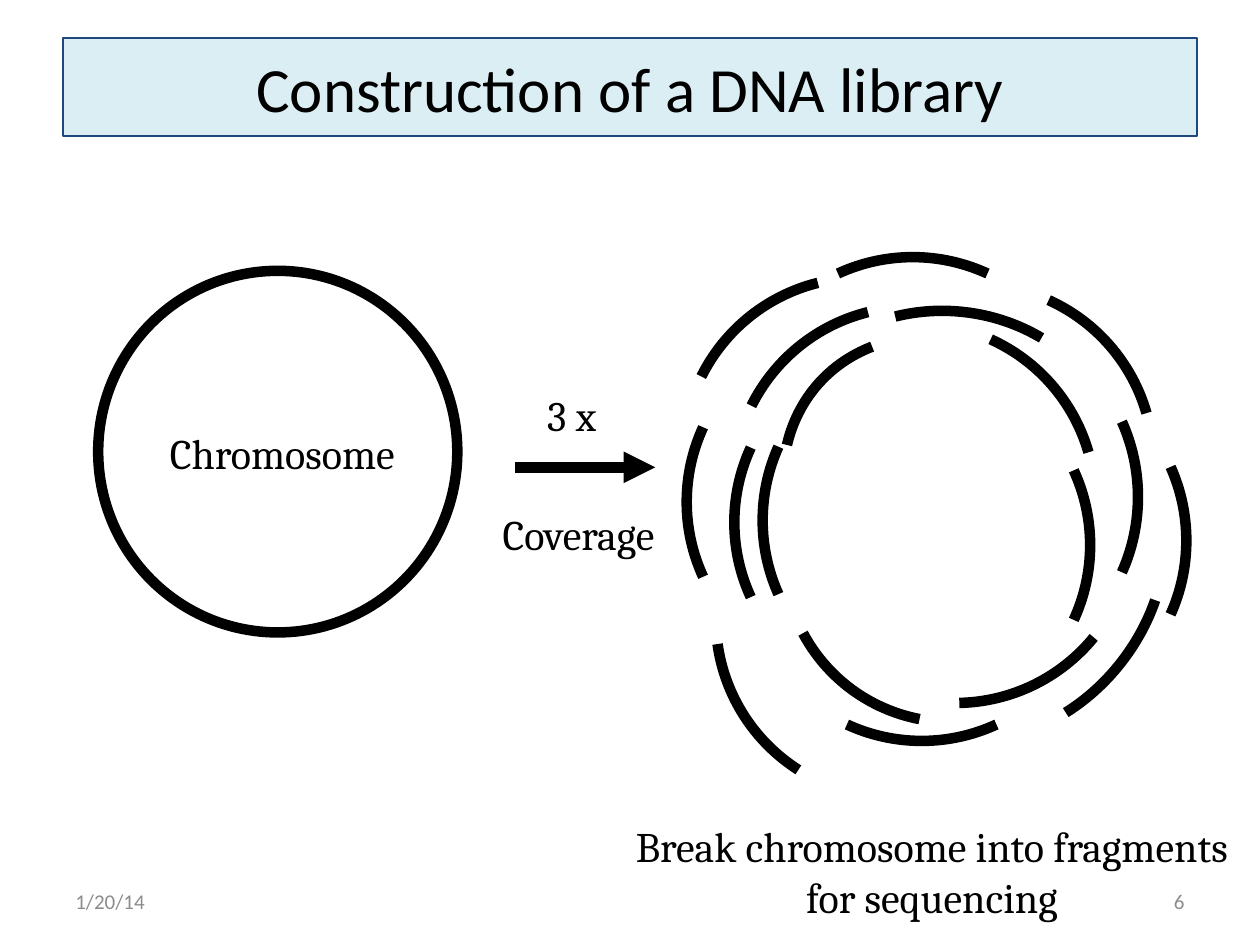
from math import atan, degrees, radians, tan

from lxml import etree
from pptx import Presentation
from pptx.dml.color import RGBColor
from pptx.enum.shapes import MSO_CONNECTOR, MSO_SHAPE
from pptx.enum.text import MSO_ANCHOR, PP_ALIGN
from pptx.oxml.ns import qn
from pptx.util import Cm, Pt

LEFT, MID, RIGHT = PP_ALIGN.LEFT, PP_ALIGN.CENTER, PP_ALIGN.RIGHT
MIDDLE = MSO_ANCHOR.MIDDLE
OVAL, ARC = MSO_SHAPE.OVAL, MSO_SHAPE.ARC
STRAIGHT = MSO_CONNECTOR.STRAIGHT

BLACK = RGBColor(0x00, 0x00, 0x00)
GREY = RGBColor(0x8C, 0x8C, 0x8C)
PALE = RGBColor(0xDB, 0xEE, 0xF4)
NAVY = RGBColor(0x1F, 0x49, 0x7D)

THICK = Pt(6)
HALF = 24.6
SIZE = (7.24, 7.29)

PIECES = [
    (3.89, 4.23, 321.2, SIZE),
    (4.90, 3.83, 0, SIZE),
    (6.12, 4.36, 49.1, SIZE),
    (5.74, 5.53, 154, SIZE),
    (4.83, 5.99, 90, SIZE),
    (3.99, 5.12, 270, SIZE),
    (5.08, 6.29, 180, SIZE),
    (5.38, 5.49, 270, (7.14, 7.01)),
    (4.90, 4.82, 321.2, SIZE),
    (4.95, 5.15, 49.1, SIZE),
    (5.73, 5.15, 310.9, (6.3, 7.29)),
    (5.83, 5.96, 216.4, (7.01, 7.29)),
    (4.95, 5.53, 270, SIZE),
    (4.57, 7.46, 237.3, SIZE),
    (6.91, 5.90, 90, (7.14, 7.01)),
    (6.97, 6.71, 128.5, (6.96, 5.38)),
    (5.60, 4.50, 8.3, (7.16, 6.45)),
    (5.87, 5.02, 90, (7.29, 7.14)),
]


def write(frame, text, size=24, font="Cambria", color=BLACK, align=MID, wrap=True):
    """Fill a text frame with one formatted paragraph."""
    frame.word_wrap = wrap
    frame.vertical_anchor = MIDDLE
    para = frame.paragraphs[0]
    para.alignment = align
    run = para.add_run()
    run.text = text
    run.font.size = Pt(size)
    run.font.name = font
    run.font.color.rgb = color


def label(slide, box, text, **style):
    """Add a text box holding one paragraph."""
    area = slide.shapes.add_textbox(*map(Cm, box))
    write(area.text_frame, text, **style)


def stroke(slide, kind, box):
    """Add an unfilled shape with a thick black line."""
    shape = slide.shapes.add_shape(kind, *map(Cm, box))
    shape.shadow.inherit = False
    shape.fill.background()
    shape.line.color.rgb = BLACK
    shape.line.width = THICK
    return shape


def header(slide, box):
    """Place and format the title."""
    title = slide.shapes.title
    title.left, title.top, title.width, title.height = map(Cm, box)
    title.fill.solid()
    title.fill.fore_color.rgb = PALE
    title.line.color.rgb = NAVY
    title.line.width = Pt(1)
    write(title.text_frame, "Construction of a DNA library", size=36, font="Calibri")


def genome(slide, box):
    """Draw the whole chromosome as a labelled ring."""
    x, y, wide, high = box
    stroke(slide, OVAL, box)
    label(slide, (x + 1.17, y + 3.04, wide - 2.16, 1.27), "Chromosome", wrap=False)


def step(slide, box):
    """Draw the coverage arrow between its two labels."""
    x, y, wide, high = box
    level = y + 1.7
    arrow = slide.shapes.add_connector(
        STRAIGHT, Cm(x + 0.61), Cm(level), Cm(x + 3.43), Cm(level))
    arrow.line.color.rgb = BLACK
    arrow.line.width = THICK
    etree.SubElement(arrow.line._get_or_add_ln(), qn("a:tailEnd"), type="triangle")
    etree.SubElement(arrow._element.spPr, qn("a:effectLst"))
    label(slide, (x + 0.96, y, 1.57, 1.27), "3 x", wrap=False)
    label(slide, (x, y + high - 1.27, wide, 1.27), "Coverage", wrap=False)


def library(slide, box):
    """Scatter the fragments and caption them."""
    x, y, wide, high = box
    for across, down, turn, (w, h) in PIECES:
        arc = stroke(slide, ARC, (x + across - w / 2, y + down - h / 2, w, h))
        lean = degrees(atan(w / h * tan(radians(HALF))))
        arc.adjustments[0] = (270 - lean) * 0.6
        arc.adjustments[1] = (270 + lean) * 0.6
        arc.rotation = turn
    label(slide, (x - 1.23, y + high - 2.31, wide + 1.23, 2.31),
          "Break chromosome into fragments for sequencing")


def footer(slide, box):
    """Write the date and the slide number."""
    x, y, wide, high = box
    span = 5.92
    style = dict(size=12, font="Calibri", color=GREY)
    label(slide, (x, y, span, high), "1/20/14", align=LEFT, **style)
    label(slide, (x + wide - span, y, span, high), "6", align=RIGHT, **style)


def main():
    """Build and save the slide."""
    deck = Presentation()
    deck.slide_width, deck.slide_height = Cm(25.4), Cm(19.05)
    slide = deck.slides.add_slide(deck.slide_layouts[5])
    header(slide, (1.27, 0.76, 22.86, 1.98))
    genome(slide, (1.98, 5.46, 7.24, 7.29))
    step(slide, (9.78, 7.72, 3.76, 3.68))
    library(slide, (13.5, 5, 11.8, 13.72))
    footer(slide, (1.27, 17.65, 22.86, 1.02))
    deck.save("out.pptx")


if __name__ == "__main__":
    main()
